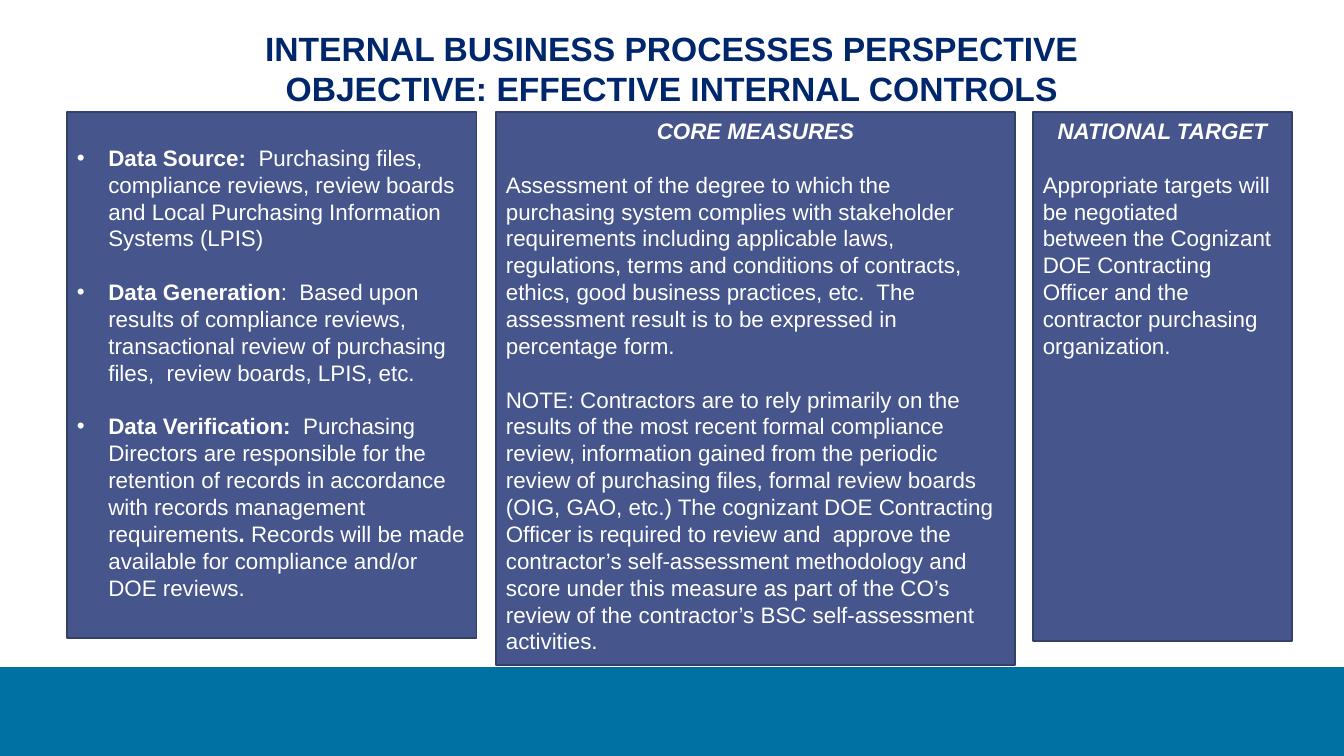
from pptx import Presentation
from pptx.dml.color import RGBColor
from pptx.enum import shapes, text
from pptx.oxml.ns import qn
from pptx.util import Cm, Pt

NAVY = RGBColor(0x00, 0x26, 0x6C)
PANEL = RGBColor(0x46, 0x56, 0x8C)
EDGE = RGBColor(0x34, 0x40, 0x68)
FOOTER = RGBColor(0x00, 0x71, 0xA3)
WHITE = RGBColor(0xFF, 0xFF, 0xFF)

TITLE = ["INTERNAL BUSINESS PROCESSES PERSPECTIVE",
         "OBJECTIVE: EFFECTIVE INTERNAL CONTROLS"]
DATA = [
    [("Data Source:  ", True),
     ("Purchasing files, compliance reviews, review boards and Local "
      "Purchasing Information Systems (LPIS)", False)],
    [("Data Generation", True),
     (":  Based upon  results of compliance reviews, transactional review of "
      "purchasing files,  review boards, LPIS, etc.", False)],
    [("Data Verification:  ", True),
     ("Purchasing Directors are responsible for the retention of records in "
      "accordance with records management requirements", False),
     (".", True),
     (" Records will be made available for compliance and/or DOE reviews.", False)],
]
MEASURES = [
    ["Assessment of the degree to which the purchasing system complies with "
     "stakeholder requirements including applicable laws, regulations, terms "
     "and conditions of contracts, ethics, good business practices, etc.  The "
     "assessment result is to be expressed in percentage form."],
    ["NOTE: Contractors are to rely primarily on the results of the most recent "
     "formal compliance review, information gained from the periodic review of "
     "purchasing files, formal review boards (OIG, GAO, etc.) The cognizant DOE "
     "Contracting Officer is required to review and  approve the contractor’s "
     "self-assessment methodology and score under this measure as part of the "
     "CO’s review of the contractor’s BSC self-assessment activities."],
]
TARGET = [["Appropriate targets will be negotiated",
           "between the Cognizant DOE Contracting",
           "Officer and the contractor purchasing",
           "organization."]]

PANEL_TOP = Cm(2.82)
BODY_SIZE, BODY_LINE = Pt(16), Pt(19.2)
TITLE_SIZE, TITLE_LINE = Pt(24), Pt(29)
INSET_X, INSET_Y = Cm(0.25), Cm(0.13)


def place(sp, left, top, width, height):
    """Set the position and size of a shape."""
    sp.left, sp.top, sp.width, sp.height = left, top, width, height


def frame(sp):
    """Return the emptied, top-anchored text frame of a shape."""
    tf = sp.text_frame
    tf.word_wrap = True
    tf.auto_size = text.MSO_AUTO_SIZE.NONE
    tf.vertical_anchor = text.MSO_ANCHOR.TOP
    tf.margin_left = tf.margin_right = INSET_X
    tf.margin_top = tf.margin_bottom = INSET_Y
    return tf


def paint(sp, fill, line=None):
    """Fill a shape and outline it if a line colour is given."""
    sp.fill.solid()
    sp.fill.fore_color.rgb = fill
    if line is None:
        sp.line.fill.background()
    else:
        sp.line.color.rgb = line
        sp.line.width = Pt(1)


def add_paragraph(tf, align, line, before=Pt(0)):
    """Return the next paragraph of a text frame with its spacing set."""
    p = tf.paragraphs[0]
    if p.runs:
        p = tf.add_paragraph()
    p.alignment = align
    p.line_spacing = line
    p.space_before = before
    p.space_after = Pt(0)
    return p


def add_run(p, words, size=BODY_SIZE, color=WHITE, bold=False, italic=False):
    """Append one formatted run to a paragraph."""
    r = p.add_run()
    r.text = words
    r.font.name, r.font.size = "Arial", size
    r.font.bold, r.font.italic = bold, italic
    r.font.color.rgb = color


def add_rect(s, *box):
    """Add a rectangle without shadow."""
    sp = s.shapes.add_shape(shapes.MSO_SHAPE.RECTANGLE, *box)
    sp.shadow.inherit = False
    return sp


def add_panel(s, left, width, height, heading, blocks):
    """Add a panel with a centred heading and blocks one line apart."""
    sp = add_rect(s, left, PANEL_TOP, width, height)
    paint(sp, PANEL, EDGE)
    tf = frame(sp)
    p = add_paragraph(tf, text.PP_ALIGN.CENTER, BODY_LINE)
    add_run(p, heading, bold=True, italic=True)
    for block in blocks:
        for i, words in enumerate(block):
            p = add_paragraph(tf, text.PP_ALIGN.LEFT, BODY_LINE,
                              Pt(0) if i else BODY_LINE)
            add_run(p, words)


def main():
    """Build the slide and save it."""
    prs = Presentation()
    prs.slide_width, prs.slide_height = Cm(33.87), Cm(19.05)
    s = prs.slides.add_slide(prs.slide_layouts[1])

    footer_top = Cm(16.81)
    paint(add_rect(s, 0, footer_top, prs.slide_width,
                   prs.slide_height - footer_top), FOOTER)

    title, body = s.placeholders
    place(title, Cm(5.83), Cm(0.56), Cm(22.2), Cm(2.31))
    tf = frame(title)
    for words in TITLE:
        p = add_paragraph(tf, text.PP_ALIGN.CENTER, TITLE_LINE)
        add_run(p, words, TITLE_SIZE, NAVY, bold=True)

    place(body, Cm(1.69), PANEL_TOP, Cm(10.32), Cm(13.26))
    paint(body, PANEL, EDGE)
    tf = frame(body)
    tf.margin_top = INSET_Y + BODY_LINE
    for i, runs in enumerate(DATA):
        p = add_paragraph(tf, text.PP_ALIGN.LEFT, BODY_LINE,
                          BODY_LINE if i else Pt(0))
        pPr = p._p.get_or_add_pPr()
        pPr.set("marL", str(Cm(0.79)))
        pPr.set("indent", str(-Cm(0.79)))
        bullet = pPr.makeelement(qn("a:buChar"), {"char": "•"})
        pPr.append(bullet)
        for words, bold in runs:
            add_run(p, words, bold=bold)

    add_panel(s, Cm(12.5), Cm(13.08), Cm(13.94), "CORE MEASURES", MEASURES)
    add_panel(s, Cm(26.03), Cm(6.53), Cm(13.33), "NATIONAL TARGET", TARGET)
    prs.save("out.pptx")


if __name__ == "__main__":
    main()
